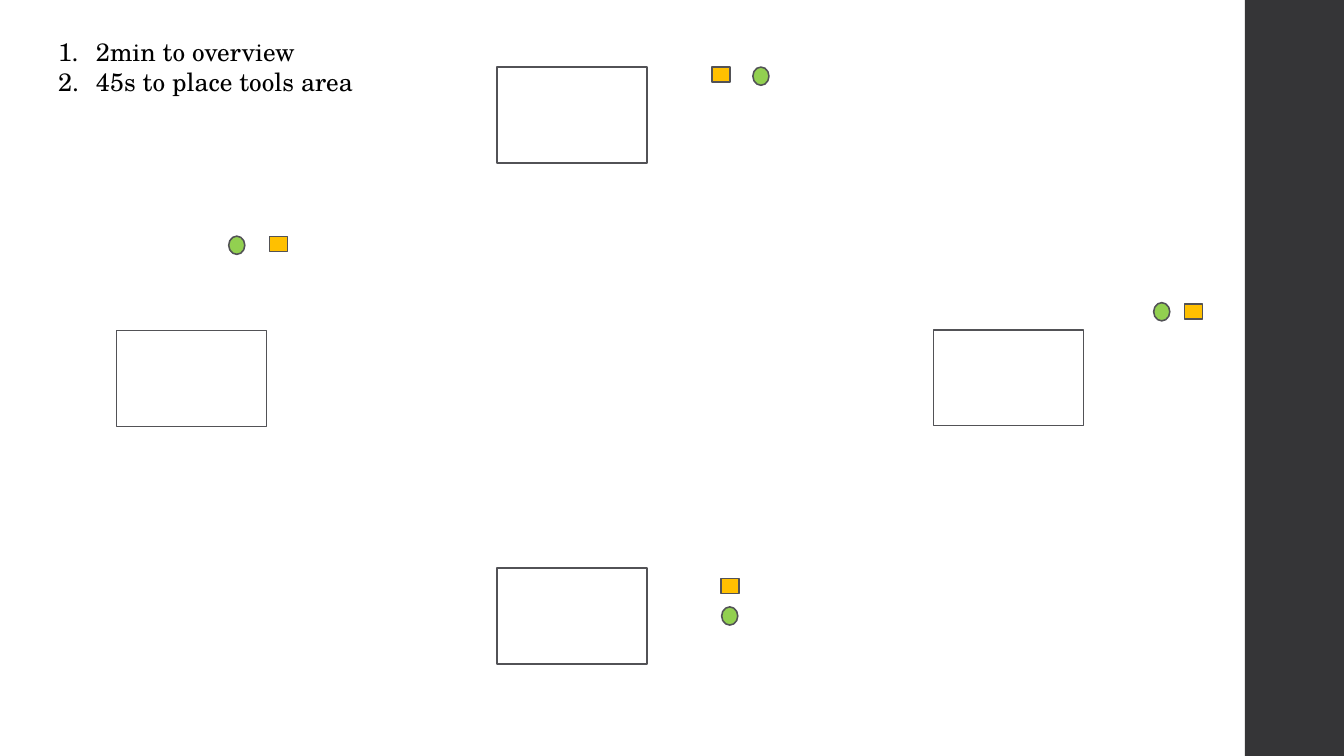
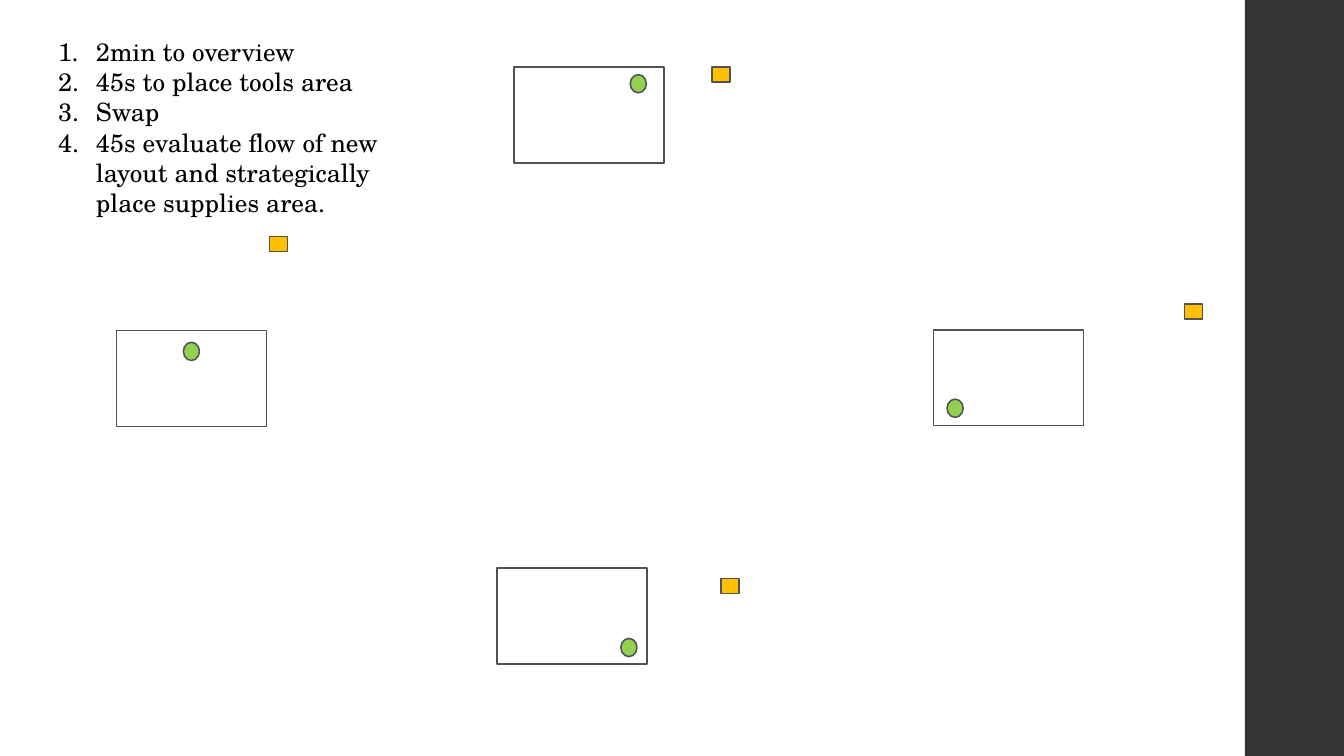
import pptx
import pptx.dml.color
import pptx.enum.shapes
import pptx.enum.text
import pptx.oxml.ns
import pptx.util
from lxml import etree

Pt = pptx.util.Pt
SHAPES = pptx.enum.shapes.MSO_SHAPE

PAGE_SIZE = (960, 540)
BAND = (889.2, 0, 70.8, 540)
STEPS_LEFT, STEPS_TOP, STEPS_WIDTH = 34.5, 22.3, 280.8
STEP_INDENT = 27
ROOM_SIZE = (107.3, 68.5)
SUPPLY_SIZE = (13, 10.8)
TOOL_SIZE = (11.5, 13)

FONT = "TeX Gyre Schola"
BAND_COLOUR = "353537"
OUTLINE = "525256"
ROOM_COLOUR = "FFFFFF"
SUPPLY_COLOUR = "FFC000"
TOOL_COLOUR = "92D050"
TEXT_COLOUR = "000000"

TOP_ROOM = (354.8, 48)
MOVED_TOP_ROOM = (367.2, 48)
BOTTOM_ROOM = (354.8, 405.6)
RIGHT_ROOM = (666.7, 235.6)
LEFT_ROOM = (83.2, 236.2)
SUPPLIES = [(508.4, 47.9), (515, 413.2), (846, 217.1), (192.4, 168.8)]

STEPS = [
    "2min to overview",
    "45s to place tools area",
    "Swap",
    "45s evaluate flow of new layout and strategically place supplies area.",
]


def colour(value):
    return pptx.dml.color.RGBColor.from_string(value)


def add_block(shapes, kind, box, fill, outline=None):
    block = shapes.add_shape(kind, *map(Pt, box))
    block.shadow.inherit = False
    block.fill.solid()
    block.fill.fore_color.rgb = colour(fill)
    if outline:
        block.line.color.rgb = colour(outline)
        block.line.width = Pt(1.1)
    else:
        block.line.fill.background()
    return block


def add_room(shapes, corner):
    add_block(shapes, SHAPES.RECTANGLE, corner + ROOM_SIZE, ROOM_COLOUR, OUTLINE)


def add_tool(shapes, corner):
    add_block(shapes, SHAPES.OVAL, corner + TOOL_SIZE, TOOL_COLOUR, OUTLINE)


def add_equipped_room(page, corner, tool_offset):
    group = page.shapes.add_group_shape()
    add_room(group.shapes, corner)
    left, top = corner
    across, down = tool_offset
    add_tool(group.shapes, (left + across, top + down))


def number_paragraph(paragraph):
    properties = paragraph._p.get_or_add_pPr()
    properties.set("marL", str(Pt(STEP_INDENT)))
    properties.set("indent", str(-Pt(STEP_INDENT)))
    numbering = etree.SubElement(properties, pptx.oxml.ns.qn("a:buAutoNum"))
    numbering.set("type", "arabicPeriod")


def add_steps(page, steps, height):
    box = page.shapes.add_textbox(
        Pt(STEPS_LEFT), Pt(STEPS_TOP), Pt(STEPS_WIDTH), Pt(height)
    )
    frame = box.text_frame
    frame.word_wrap = True
    frame.auto_size = pptx.enum.text.MSO_AUTO_SIZE.SHAPE_TO_FIT_TEXT
    frame.text = "\n".join(steps)
    for paragraph in frame.paragraphs:
        number_paragraph(paragraph)
        for span in paragraph.runs:
            span.font.name = FONT
            span.font.size = Pt(18)
            span.font.color.rgb = colour(TEXT_COLOUR)


def add_page(deck, steps, steps_height):
    page = deck.slides.add_slide(deck.slide_layouts[6])
    add_block(page.shapes, SHAPES.RECTANGLE, BAND, BAND_COLOUR)
    add_steps(page, steps, steps_height)
    for corner in SUPPLIES:
        add_block(
            page.shapes, SHAPES.RECTANGLE, corner + SUPPLY_SIZE, SUPPLY_COLOUR, OUTLINE
        )
    return page


def build_placing_page(deck):
    page = add_page(deck, STEPS[:2], 72.7)
    for corner in (TOP_ROOM, BOTTOM_ROOM, RIGHT_ROOM, LEFT_ROOM):
        add_room(page.shapes, corner)
    for corner in ((537.8, 47.9), (824.1, 216.2), (163.4, 168.7), (515.5, 433.5)):
        add_tool(page.shapes, corner)


def build_swap_page(deck):
    page = add_page(deck, STEPS, 138.2)
    add_equipped_room(page, MOVED_TOP_ROOM, (83, 5.3))
    add_equipped_room(page, RIGHT_ROOM, (9.8, 49.5))
    add_equipped_room(page, LEFT_ROOM, (47.8, 8.3))
    add_equipped_room(page, BOTTOM_ROOM, (88.7, 50.4))


def main():
    deck = pptx.Presentation()
    deck.slide_width, deck.slide_height = map(Pt, PAGE_SIZE)
    build_placing_page(deck)
    build_swap_page(deck)
    deck.save("out.pptx")


if __name__ == "__main__":
    main()
